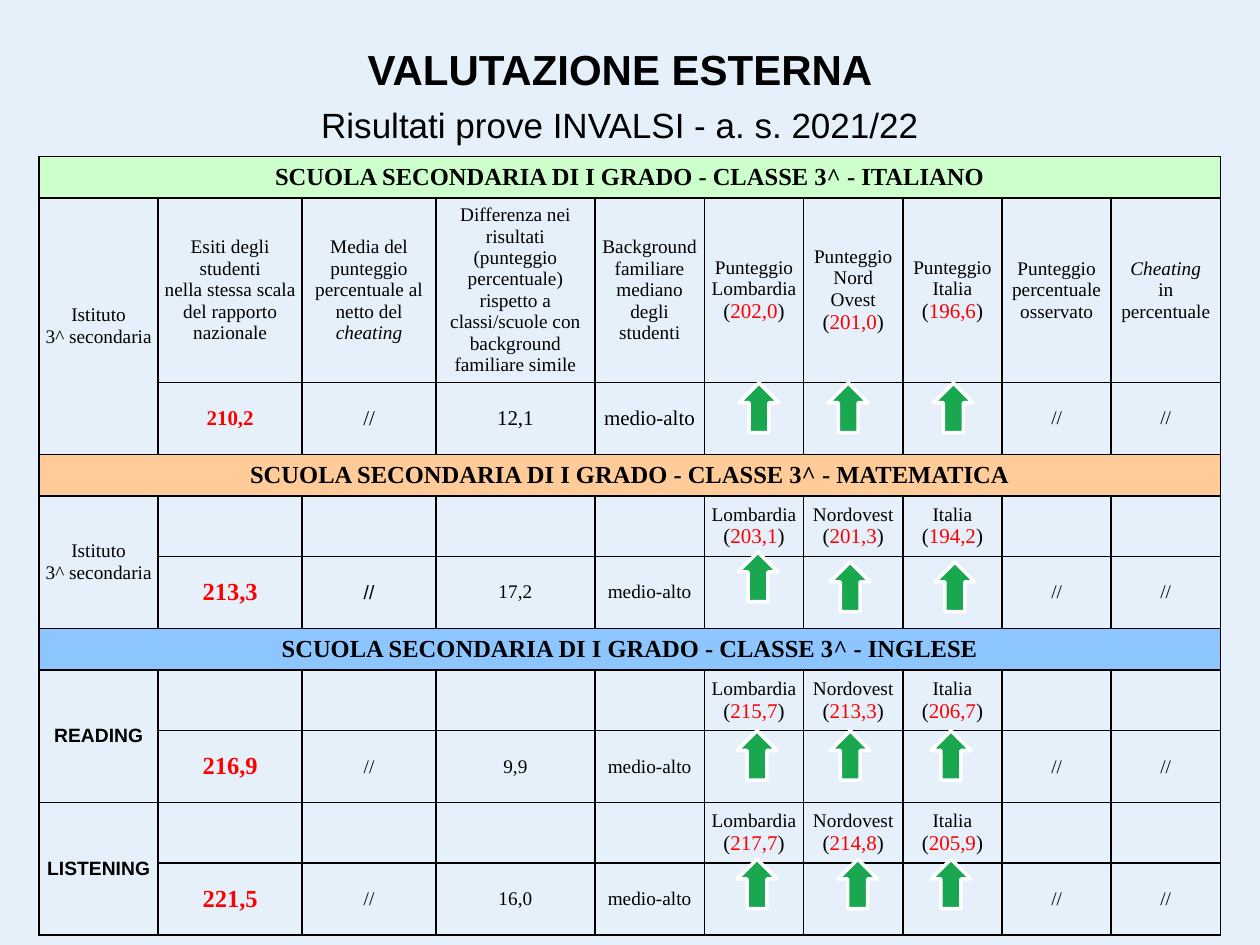
from lxml import etree
from pptx import Presentation
from pptx.dml.color import RGBColor
from pptx.enum import shapes, text
from pptx.oxml import ns
from pptx.util import Cm, Pt

SERIF, SANS = "Times New Roman", "Arial"
BLACK, RED = "000000", "FF0000"
TITLE = [("VALUTAZIONE ESTERNA", 24, True),
         ("Risultati prove INVALSI - a. s. 2021/22", 20, False)]

# Asterisks enclose italics; a line in brackets holds a reference score.
HEADINGS = [
    "Esiti degli studenti\nnella stessa scala del rapporto nazionale",
    "Media del punteggio\npercentuale al netto del *cheating*",
    "Differenza nei risultati (punteggio percentuale) rispetto a "
    "classi/scuole con background familiare simile",
    "Background familiare\nmediano degli studenti",
    "Punteggio\nLombardia\n(202,0)", "Punteggio\nNord Ovest\n(201,0)",
    "Punteggio\nItalia\n(196,6)",
    "Punteggio percentuale\nosservato", "*Cheating*\nin percentuale"]


def area_headings(lombardia, nordovest, italia):
    return ["", "", "", "", f"Lombardia\n({lombardia})",
            f"Nordovest\n({nordovest})", f"Italia\n({italia})", "", ""]


INSTITUTE = "Istituto\n3^ secondaria"
# Each group: label, headings, result, difference, arrow positions (cm)
SUBJECTS = [
    ("ITALIANO", "CCFFCC", [
        (INSTITUTE, HEADINGS, "210,2", "12,1",
         [(14.9, 7.72), (16.7, 7.72), (18.82, 7.72)])]),
    ("MATEMATICA", "FFCC99", [
        (INSTITUTE, area_headings("203,1", "201,3", "194,2"), "213,3", "17,2",
         [(14.88, 11.13), (16.74, 11.33), (18.85, 11.33)])]),
    ("INGLESE", "8DC6FF", [
        ("READING", area_headings("215,7", "213,3", "206,7"), "216,9", "9,9",
         [(14.86, 14.73), (16.74, 14.73), (18.77, 14.73)]),
        ("LISTENING", area_headings("217,7", "214,8", "205,9"), "221,5", "16,0",
         [(14.86, 17.32), (16.89, 17.32), (18.77, 17.32)])]),
]
COLUMNS = [2.4, 2.9, 2.7, 3.2, 2.21, 2, 2, 2, 2.2, 2.2]
BANNER_H, FIRST_HEADING_H, HEADING_H, RESULT_H = 0.84, 3.5, 1.22, 1.45


def color(hex_code):
    return RGBColor.from_string(hex_code)


def style(run, size, font=SERIF, ink=BLACK, bold=False, italic=False):
    run.font.name, run.font.size = font, Pt(size)
    run.font.bold, run.font.italic = bold, italic
    run.font.color.rgb = color(ink)


def split_line(line):
    """Yield the text of each run with the style it adds."""
    if line.startswith("(") and line.endswith(")"):
        yield "(", {"size": 12}
        yield line[1:-1], {"size": 12, "ink": RED}
        yield ")", {"size": 12}
        return
    for i, part in enumerate(line.split("*")):
        if part:
            yield part, {"italic": i % 2 == 1}


def write(cell, content, size=11, **look):
    cell.vertical_anchor = text.MSO_ANCHOR.MIDDLE
    frame = cell.text_frame
    for i, line in enumerate(content.split("\n")):
        paragraph = frame.add_paragraph() if i else frame.paragraphs[0]
        paragraph.alignment = text.PP_ALIGN.CENTER
        for part, extra in split_line(line):
            run = paragraph.add_run()
            run.text = part
            style(run, **{"size": size, **look, **extra})


def format_cell(cell):
    """Clear the fill, narrow the margins and draw all four borders."""
    cell.margin_left = cell.margin_right = Cm(0.12)
    cell.margin_top = cell.margin_bottom = Cm(0.13)
    properties = cell._tc.get_or_add_tcPr()
    for side in ("lnL", "lnR", "lnT", "lnB"):
        border = etree.SubElement(properties, ns.qn(f"a:{side}"), w=str(Pt(1)))
        fill = etree.SubElement(border, ns.qn("a:solidFill"))
        etree.SubElement(fill, ns.qn("a:srgbClr"), val=BLACK)
    cell.fill.background()


def add_arrow(slide, left, top):
    arrow = slide.shapes.add_shape(shapes.MSO_SHAPE.UP_ARROW,
                                   Cm(left), Cm(top), Cm(0.8), Cm(1))
    arrow.shadow.inherit = False
    arrow.fill.solid()
    arrow.fill.fore_color.rgb = color("19A74F")
    arrow.line.color.rgb = color("FFFFFF")
    arrow.line.width = Pt(2)


def add_title(slide):
    title = slide.shapes.title
    title.left, title.top, title.width, title.height = (
        Cm(1.7), Cm(0.71), Cm(21.6), Cm(2.39))
    frame = title.text_frame
    frame.vertical_anchor = text.MSO_ANCHOR.MIDDLE
    frame.text = "\n".join(line for line, _, _ in TITLE)
    for paragraph, (_, size, bold) in zip(frame.paragraphs, TITLE):
        paragraph.alignment = text.PP_ALIGN.CENTER
        paragraph.space_before = Pt(0)
        style(paragraph.runs[0], size, SANS, bold=bold)
    frame.paragraphs[1].space_before = Pt(6)


def add_results(slide):
    heights = []
    for _, _, groups in SUBJECTS:
        heights.append(BANNER_H)
        for _, headings, *_ in groups:
            heights += [FIRST_HEADING_H if headings is HEADINGS else HEADING_H,
                        RESULT_H]
    table = slide.shapes.add_table(
        len(heights), len(COLUMNS), Cm(0.79), Cm(3.15),
        Cm(sum(COLUMNS)), Cm(sum(heights))).table
    table.first_row = table.horz_banding = False
    for column, width in zip(table.columns, COLUMNS):
        column.width = Cm(width)
    for table_row, height in zip(table.rows, heights):
        table_row.height = Cm(height)
    for cell in table.iter_cells():
        format_cell(cell)

    row = 0
    for subject, tint, groups in SUBJECTS:
        banner = table.cell(row, 0)
        banner.merge(table.cell(row, len(COLUMNS) - 1))
        banner.fill.solid()
        banner.fill.fore_color.rgb = color(tint)
        write(banner, f"SCUOLA SECONDARIA DI I GRADO - CLASSE 3^ - {subject}",
              14, bold=True)
        row += 1
        for label, headings, result, difference, arrows in groups:
            first = headings is HEADINGS
            label_cell = table.cell(row, 0)
            label_cell.merge(table.cell(row + 1, 0))
            is_skill = label != INSTITUTE
            write(label_cell, label, font=SANS if is_skill else SERIF,
                  bold=is_skill)
            for col, heading in enumerate(headings, 1):
                write(table.cell(row, col), heading)
            size = 12 if first else 11
            write(table.cell(row + 1, 1), result, 12 if first else 14,
                  ink=RED, bold=True)
            write(table.cell(row + 1, 2), "//", size,
                  font=SANS if subject == "MATEMATICA" else SERIF)
            write(table.cell(row + 1, 3), difference, size)
            write(table.cell(row + 1, 4), "medio-alto", size)
            for col in (8, 9):
                write(table.cell(row + 1, col), "//")
            for left, top in arrows:
                add_arrow(slide, left, top)
            row += 2


def main():
    deck = Presentation()
    deck.slide_width, deck.slide_height = Cm(25.4), Cm(19.05)
    slide = deck.slides.add_slide(deck.slide_layouts[5])
    slide.background.fill.solid()
    slide.background.fill.fore_color.rgb = color("E5F0FA")
    add_title(slide)
    add_results(slide)
    deck.save("out.pptx")


if __name__ == "__main__":
    main()
